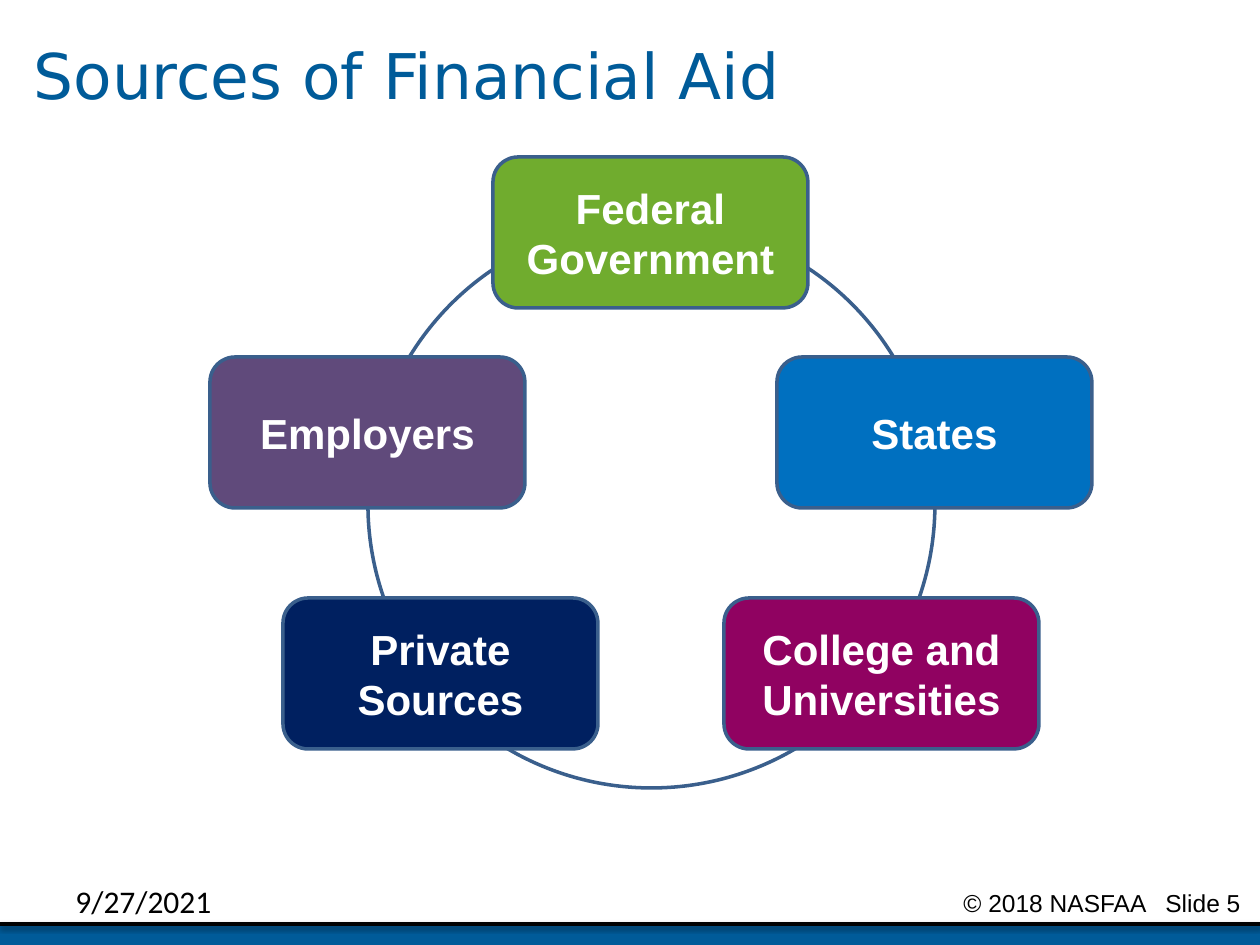
from dataclasses import dataclass

from lxml.etree import SubElement
from pptx import Presentation
from pptx.dml.color import RGBColor
from pptx.enum.shapes import MSO_CONNECTOR, MSO_SHAPE
from pptx.enum.text import MSO_ANCHOR, MSO_AUTO_SIZE, PP_ALIGN
from pptx.oxml.ns import qn
from pptx.util import Emu, Pt


@dataclass(frozen=True)
class Theme:
    """Colours, fonts and type sizes of the slide."""
    blue: str = "005B99"
    outline: str = "3A5F8C"
    black: str = "000000"
    white: str = "FFFFFF"
    green: str = "70AC2E"
    sky: str = "0070C0"
    plum: str = "900261"
    navy: str = "002060"
    purple: str = "604A7B"
    title_font: str = "DejaVu Sans"
    body_font: str = "Arial"
    date_font: str = "Calibri"
    title_size: int = 36
    box_size: int = 24
    date_size: int = 18
    footer_size: int = 14
    line_width: int = 2


T = Theme()
SLIDE_W, SLIDE_H = 1260, 945
BOX_W, BOX_H = 315, 151
BOX_LEFT = 493
BAR_TOP = 924
SOURCES = [
    ("Federal Government", 0, 157, T.green),
    ("States", 284, 357, T.sky),
    ("College and Universities", 231, 598, T.plum),
    ("Private Sources", -210, 598, T.navy),
    ("Employers", -283, 357, T.purple),
]


def px(n):
    """Turn pixels into EMU."""
    return Emu(round(n * 914400 / 126))


def rgb(value):
    """Turn a hex string into a colour."""
    return RGBColor.from_string(value)


def set_text(tf, text, font, size, color, bold=False,
             align=PP_ALIGN.LEFT, anchor=MSO_ANCHOR.TOP):
    """Write one formatted paragraph and return it."""
    frame_format = {"word_wrap": True, "auto_size": MSO_AUTO_SIZE.NONE,
                    "vertical_anchor": anchor}
    for name, value in frame_format.items():
        setattr(tf, name, value)
    p = tf.paragraphs[0]
    p.alignment = align
    r = p.add_run()
    r.text = text
    for name, value in {"name": font, "size": Pt(size), "bold": bold}.items():
        setattr(r.font, name, value)
    r.font.color.rgb = rgb(color)
    return p


def add_title(s, text):
    """Place and fill the title placeholder."""
    sp = s.shapes.title
    place = {"left": 21, "top": 0, "width": 1218, "height": 158}
    for name, value in place.items():
        setattr(sp, name, px(value))
    p = set_text(sp.text_frame, text, T.title_font, T.title_size, T.blue,
                 anchor=MSO_ANCHOR.MIDDLE)
    p.line_spacing = 0.9


def add_shape(s, kind, box, fill=None, line=None):
    """Add a preset shape with an optional fill and outline."""
    sp = s.shapes.add_shape(kind, *map(px, box))
    sp.shadow.inherit = False
    if fill:
        sp.fill.solid()
        sp.fill.fore_color.rgb = rgb(fill)
    else:
        sp.fill.background()
    if line:
        sp.line.color.rgb = rgb(line)
        sp.line.width = Pt(T.line_width)
    else:
        sp.line.fill.background()
    return sp


def add_source(s, text, dx, top, fill):
    """Add one labelled box on the ring."""
    sp = add_shape(s, MSO_SHAPE.ROUNDED_RECTANGLE,
                   (BOX_LEFT + dx, top, BOX_W, BOX_H), fill, T.outline)
    set_text(sp.text_frame, text, T.body_font, T.box_size, T.white, True,
             PP_ALIGN.CENTER, MSO_ANCHOR.MIDDLE)


def add_label(s, text, box, font, size):
    """Add a plain text box and return its paragraph."""
    sp = s.shapes.add_textbox(*map(px, box))
    return set_text(sp.text_frame, text, font, size, T.black)


def add_tab(p, pos):
    """Give a paragraph a left tab stop."""
    tabs = SubElement(p._p.get_or_add_pPr(), qn("a:tabLst"))
    SubElement(tabs, qn("a:tab"), pos=str(px(pos)), algn="l")


def add_rule(s, y):
    """Add the full-width footer line with a soft shadow."""
    line = s.shapes.add_connector(MSO_CONNECTOR.STRAIGHT,
                                  *map(px, (0, y, SLIDE_W, y)))
    line.line.color.rgb = rgb(T.black)
    line.line.width = Pt(T.line_width)
    effects = SubElement(line._element.spPr, qn("a:effectLst"))
    shadow = SubElement(effects, qn("a:outerShdw"), blurRad=str(Pt(3.1)),
                        dist=str(Pt(1.6)), dir="5400000", rotWithShape="0")
    color = SubElement(shadow, qn("a:srgbClr"), val=T.black)
    SubElement(color, qn("a:alpha"), val="38000")


def add_footer(s):
    """Add the bar, rule, date and copyright line."""
    add_shape(s, MSO_SHAPE.RECTANGLE,
              (0, BAR_TOP, SLIDE_W, SLIDE_H - BAR_TOP), T.blue)
    add_rule(s, BAR_TOP)
    p = add_label(s, "© 2018 NASFAA\tSlide 5", (951, 882, 309, 32),
                  T.body_font, T.footer_size)
    add_tab(p, 202)
    add_label(s, "9/27/2021", (63, 876, 294, 50), T.date_font, T.date_size)


def main():
    """Build and save the slide."""
    prs = Presentation()
    prs.slide_width, prs.slide_height = px(SLIDE_W), px(SLIDE_H)
    s = prs.slides.add_slide(prs.slide_layouts[5])
    add_footer(s)
    add_shape(s, MSO_SHAPE.OVAL, (368, 221, 567, 567), line=T.outline)
    add_title(s, "Sources of Financial Aid")
    for source in SOURCES:
        add_source(s, *source)
    prs.save("out.pptx")


if __name__ == "__main__":
    main()
